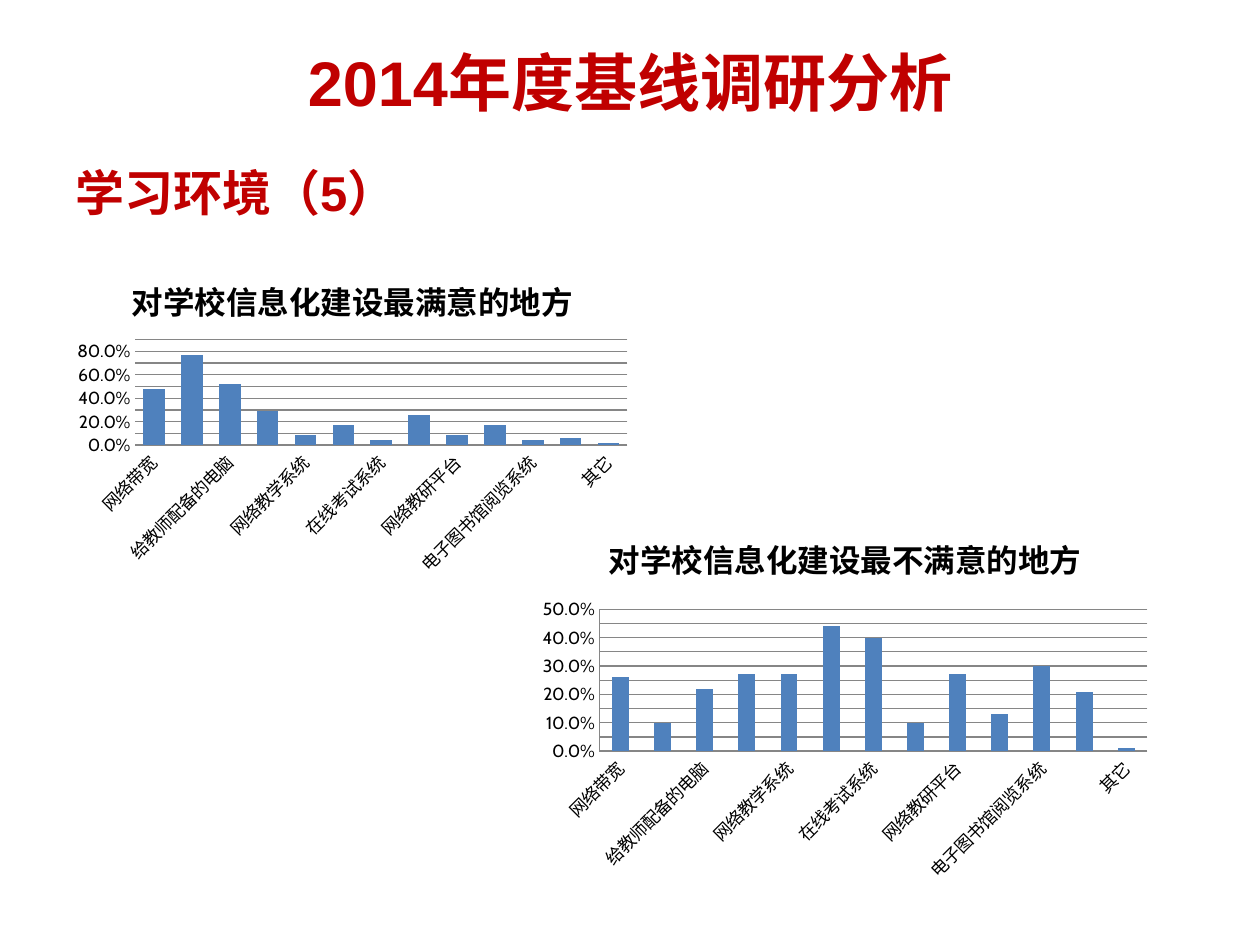
import pptx
import pptx.chart.data
import pptx.dml.color
import pptx.enum.chart
import pptx.enum.text
import pptx.util

COLORS = {"heading": "C00000", "bar": "4F81BD", "text": "000000", "grid": "868686"}
CATEGORIES = [
    "网络带宽", "教室多媒体设备（如投影、电视或电子白板等）", "给教师配备的电脑",
    "数字教学资源建设", "网络教学系统", "课堂交互系统", "在线考试系统",
    "家校互动系统", "网络教研平台", "教务、办公、安全管理平台",
    "电子图书馆阅览系统", "一卡通系统", "其它",
]
SATISFIED = [0.48, 0.77, 0.52, 0.29, 0.09, 0.17, 0.04, 0.26, 0.09, 0.17, 0.04, 0.06, 0.02]
DISSATISFIED = [0.26, 0.10, 0.22, 0.27, 0.27, 0.44, 0.40, 0.10, 0.27, 0.13, 0.30, 0.21, 0.01]


def px(length):
    return pptx.util.Emu(round(length * 914400 / 126))


def rgb(name):
    return pptx.dml.color.RGBColor.from_string(COLORS[name])


class SlideBuilder:
    heading_font = "Arial"
    chart_font = "Cabin"

    def __init__(self, slide):
        self.slide = slide

    def style_font(self, font, name, size, color, bold=False):
        font.name = name
        font.size = pptx.util.Pt(size)
        font.bold = bold
        font.color.rgb = rgb(color)

    def heading(self, box, text, size, alignment, anchor, line_spacing=1.0):
        shape = self.slide.shapes.add_textbox(*map(px, box))
        text_frame = shape.text_frame
        text_frame.word_wrap = True
        text_frame.vertical_anchor = anchor
        text_frame.text = text
        paragraph = text_frame.paragraphs[0]
        paragraph.alignment = alignment
        paragraph.line_spacing = line_spacing
        self.style_font(paragraph.runs[0].font, self.heading_font, size, "heading", True)

    def column_chart(self, box, title, values, maximum, step, gap, overlap, axis_line):
        data = pptx.chart.data.CategoryChartData(number_format="0.0%")
        data.categories = CATEGORIES
        data.add_series("Series 1", values)
        chart = self.slide.shapes.add_chart(
            pptx.enum.chart.XL_CHART_TYPE.COLUMN_CLUSTERED, *map(px, box), data).chart
        chart.has_legend = False
        self.style_font(chart.font, self.chart_font, 10, "text")

        chart.has_title = True
        chart.chart_title.include_in_layout = False
        chart.chart_title.text_frame.text = title
        run = chart.chart_title.text_frame.paragraphs[0].runs[0]
        self.style_font(run.font, self.chart_font, 18, "text", True)

        bars = chart.plots[0]
        bars.gap_width = gap
        bars.overlap = overlap
        bars.vary_by_categories = False
        fill = bars.series[0].format.fill
        fill.solid()
        fill.fore_color.rgb = rgb("bar")
        self.style_axes(chart, maximum, step, axis_line)

    def style_axes(self, chart, maximum, step, axis_line):
        value_axis, category_axis = chart.value_axis, chart.category_axis
        value_axis.minimum_scale = 0
        value_axis.maximum_scale = maximum
        value_axis.major_unit = step
        value_axis.has_major_gridlines = True
        value_axis.tick_labels.number_format = "0.0%"
        value_axis.tick_labels.number_format_is_linked = False
        lines = [value_axis.major_gridlines.format.line, category_axis.format.line]
        if axis_line:
            lines.append(value_axis.format.line)
        else:
            value_axis.format.line.fill.background()
        for line in lines:
            line.color.rgb = rgb("grid")
            line.width = pptx.util.Pt(0.75)
        for axis in (value_axis, category_axis):
            axis.major_tick_mark = pptx.enum.chart.XL_TICK_MARK.NONE


def main():
    presentation = pptx.Presentation()
    presentation.slide_width, presentation.slide_height = px(1260), px(945)
    builder = SlideBuilder(presentation.slides.add_slide(presentation.slide_layouts[6]))
    align, anchor = pptx.enum.text.PP_ALIGN, pptx.enum.text.MSO_ANCHOR

    builder.heading((0, 26, 1260, 110), "2014年度基线调研分析", 36, align.CENTER, anchor.MIDDLE)
    builder.heading((63, 145, 1134, 110), "学习环境（5）", 28, align.JUSTIFY, anchor.TOP, 1.2)
    builder.column_chart(
        (66, 255, 573, 328), "对学校信息化建设最满意的地方",
        SATISFIED, maximum=0.9, step=0.1, gap=75, overlap=-25, axis_line=False)
    builder.column_chart(
        (530, 512, 630, 378), "对学校信息化建设最不满意的地方",
        DISSATISFIED, maximum=0.5, step=0.05, gap=150, overlap=0, axis_line=True)
    presentation.save("out.pptx")


if __name__ == "__main__":
    main()
